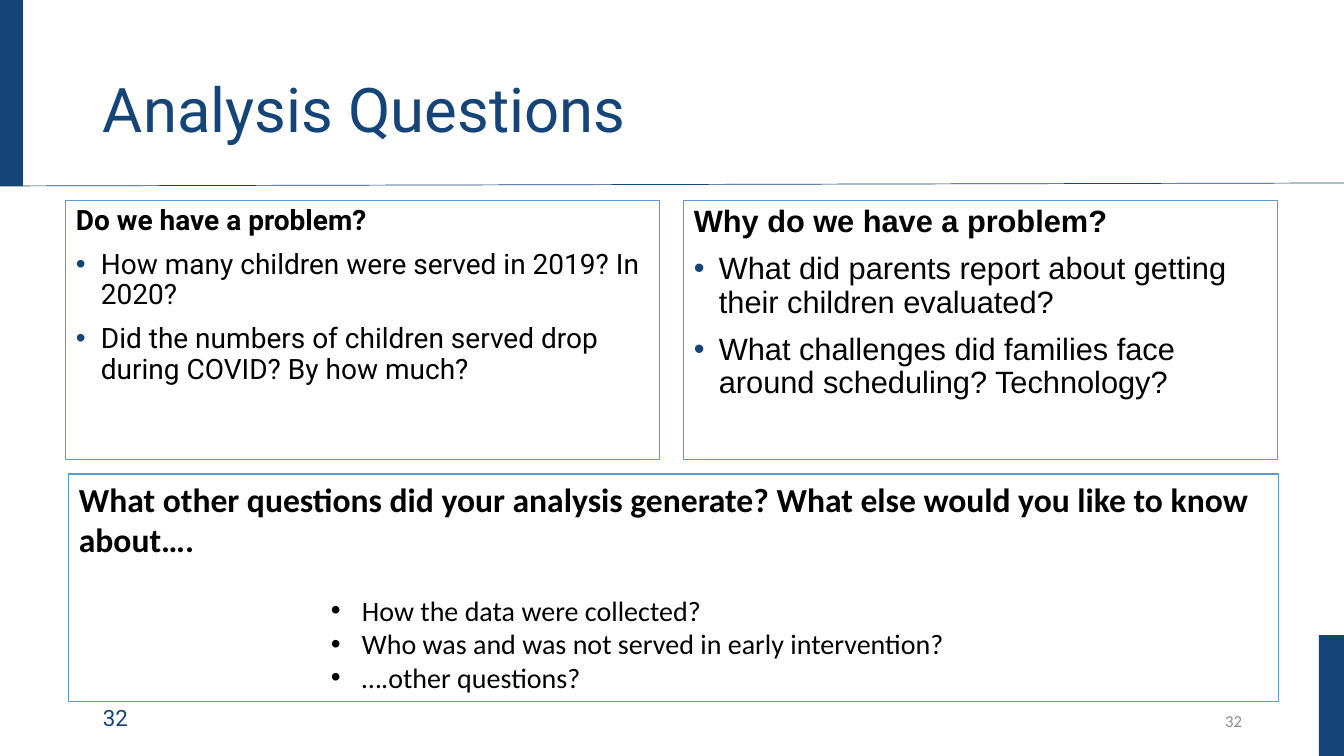
from dataclasses import dataclass

from lxml.etree import SubElement
from pptx import Presentation
from pptx.dml.color import RGBColor
from pptx.enum.shapes import MSO_CONNECTOR as CONN, MSO_SHAPE as SHAPE
from pptx.enum.text import MSO_ANCHOR as ANCHOR, MSO_AUTO_SIZE as FIT, PP_ALIGN as ALIGN
from pptx.oxml.ns import qn
from pptx.util import Emu, Pt


@dataclass(frozen=True)
class Theme:
    navy: str = "154578"
    outline: str = "5B9BD5"
    ink: str = "000000"
    gray: str = "8C8C8C"
    head_font: str = "Roboto"
    alt_font: str = "Arial"
    note_font: str = "Calibri"
    title: int = 44
    question: int = 24
    large: int = 22
    body: int = 20
    footer: int = 16
    number: int = 12


EMU_PER_PX = 914400 / 100.8


def px(n):
    return Emu(round(n * EMU_PER_PX))


def rgb(color):
    return RGBColor.from_string(color)


def write(p, text, size, font, color, bold=False, align=ALIGN.LEFT, line=None,
          before=0, after=0, indent=None, bullet_color=None):
    """Fill one paragraph; indent is (text left, bullet hang) in px."""
    p.alignment = align
    p.line_spacing = line
    p.space_before, p.space_after = Pt(before), Pt(after)
    if indent:
        left, hang = indent
        pPr = p._p.get_or_add_pPr()
        pPr.set("marL", str(px(left)))
        pPr.set("indent", str(px(-hang)))
        if bullet_color:
            clr = SubElement(pPr, qn("a:buClr"))
            SubElement(clr, qn("a:srgbClr"), val=bullet_color)
        SubElement(pPr, qn("a:buFont"), typeface="Arial")
        SubElement(pPr, qn("a:buChar"), char="•")
    r = p.add_run()
    r.text = text
    r.font.size, r.font.name, r.font.bold = Pt(size), font, bold
    r.font.color.rgb = rgb(color)


class Deck:
    def __init__(self, theme, width, height):
        self.theme = theme
        self.prs = Presentation()
        self.prs.slide_width, self.prs.slide_height = px(width), px(height)
        self.s = self.prs.slides.add_slide(self.prs.slide_layouts[6])

    def rect(self, x, y, w, h, fill=None, line=None):
        sp = self.s.shapes.add_shape(SHAPE.RECTANGLE, px(x), px(y), px(w), px(h))
        sp.shadow.inherit = False
        if fill:
            sp.fill.solid()
            sp.fill.fore_color.rgb = rgb(fill)
        else:
            sp.fill.background()
        if line:
            sp.line.color.rgb = rgb(line)
            sp.line.width = Pt(0.75)
        else:
            sp.line.fill.background()
        return sp

    def rule(self, x1, y1, x2, y2):
        c = self.s.shapes.add_connector(CONN.STRAIGHT, px(x1), px(y1), px(x2), px(y2))
        c.line.color.rgb = rgb(self.theme.navy)
        c.line.width = Pt(0.5)
        SubElement(c._element.spPr, qn("a:effectLst"))

    def label(self, x, y, w, h, text, **fmt):
        tf = self.s.shapes.add_textbox(px(x), px(y), px(w), px(h)).text_frame
        tf.word_wrap = True
        tf.vertical_anchor = ANCHOR.MIDDLE
        write(tf.paragraphs[0], text, **fmt)

    def panel(self, x, y, w, h, heading, items, head_fmt, item_fmt):
        tf = self.rect(x, y, w, h, line=self.theme.outline).text_frame
        tf.word_wrap = True
        tf.vertical_anchor = ANCHOR.TOP
        write(tf.paragraphs[0], heading, color=self.theme.ink, bold=True, **head_fmt)
        for item in items:
            write(tf.add_paragraph(), item, color=self.theme.ink, **item_fmt)
        return tf


def main():
    t = Theme()
    deck = Deck(t, 1344, 756)

    # Frame: corner bars and the rule under the title
    deck.rect(-2, 0, 25, 186, fill=t.navy)
    deck.rule(-2, 186, 1344, 183)
    deck.rect(1319, 635, 25, 121, fill=t.navy)

    # Slide numbers and title
    deck.label(93, 698, 302, 40, "32", size=t.footer, font=t.head_font, color=t.navy)
    deck.label(950, 701, 302, 40, "32", size=t.number, font=t.note_font,
               color=t.gray, align=ALIGN.RIGHT)
    deck.label(93, 40, 1159, 146, "Analysis Questions", size=t.title,
               font=t.head_font, color=t.navy, line=0.9)

    # Two question panels side by side
    panels = [
        (66, t.head_font, t.body, "Do we have a problem?",
         ["How many children were served in 2019? In 2020?",
          "Did the numbers of children served drop during COVID? By how much?"]),
        (684, t.alt_font, t.large, "Why do we have a problem?",
         ["What did parents report about getting their children evaluated?",
          "What challenges did families face around scheduling? Technology?"]),
    ]
    for x, font, size, heading, items in panels:
        fmt = dict(font=font, size=size, line=0.9)
        deck.panel(x, 201, 594, 259, heading, items, fmt,
                   dict(fmt, before=10, indent=(25, 25), bullet_color=t.navy))

    # Further questions
    tf = deck.panel(
        69, 474, 1210, 228,
        "What other questions did your analysis generate? "
        "What else would you like to know about….",
        ["How the data were collected?",
         "Who was and was not served in early intervention?",
         "….other questions?"],
        dict(font=t.note_font, size=t.question, after=24),
        dict(font=t.note_font, size=t.body, indent=(283, 31)))
    tf.auto_size = FIT.SHAPE_TO_FIT_TEXT

    deck.prs.save("out.pptx")


if __name__ == "__main__":
    main()
